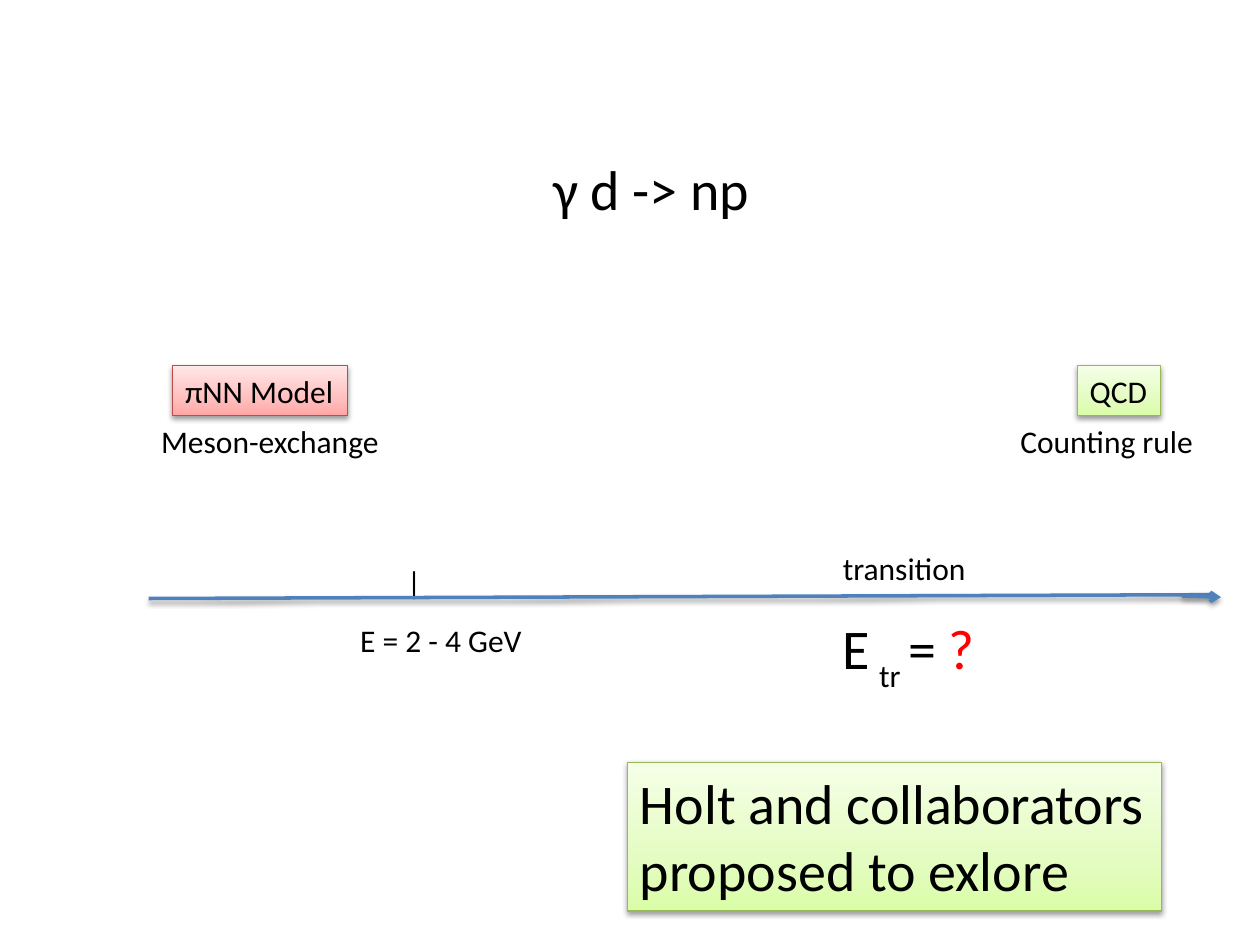
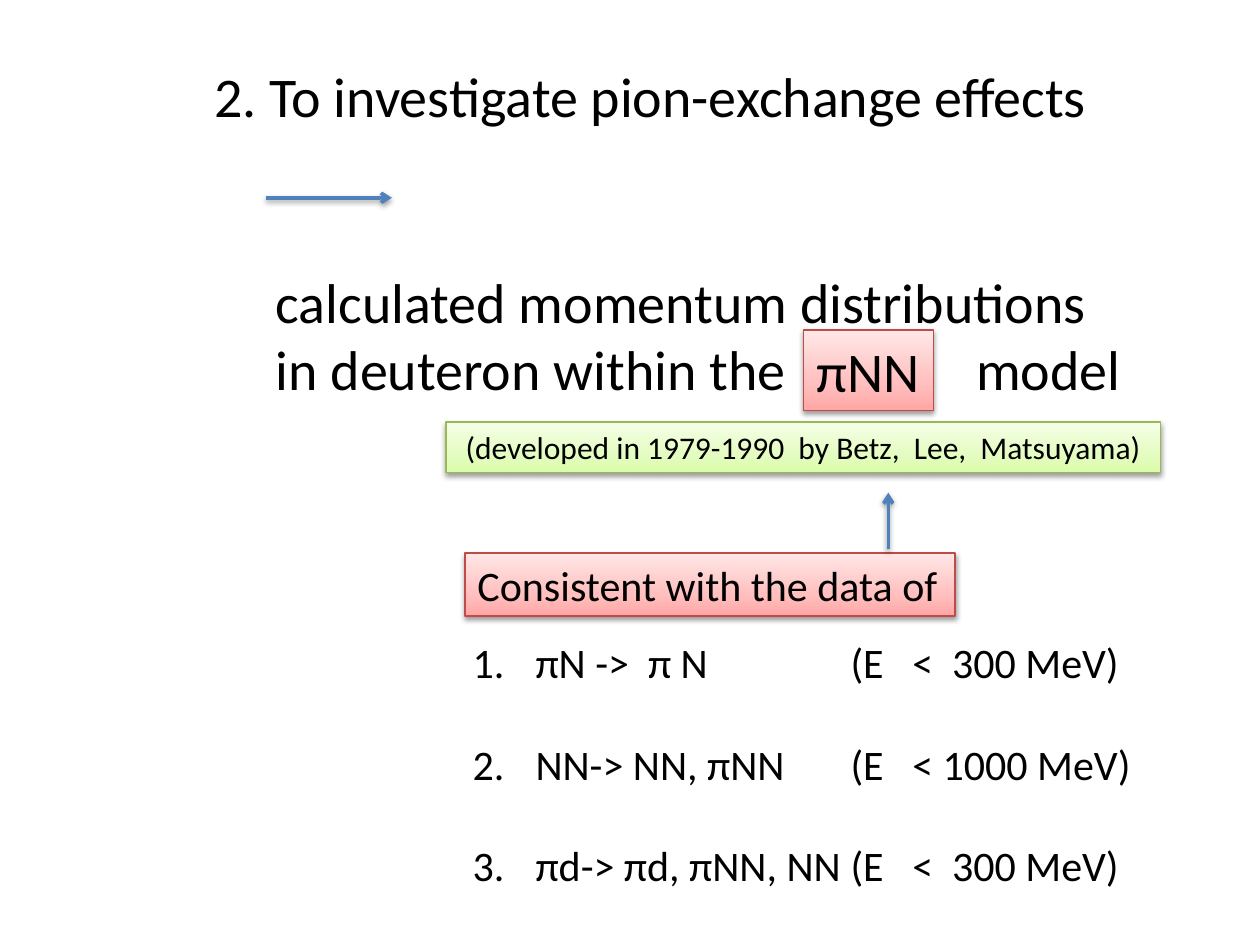
from copy import deepcopy

from lxml import etree
from pptx import Presentation
from pptx.dml.color import RGBColor
from pptx.enum.shapes import MSO_CONNECTOR, MSO_SHAPE
from pptx.enum.text import MSO_ANCHOR, MSO_AUTO_SIZE, PP_ALIGN
from pptx.oxml.ns import qn
from pptx.util import Inches, Pt

RECTANGLE = MSO_SHAPE.RECTANGLE
STRAIGHT = MSO_CONNECTOR.STRAIGHT
TOP = MSO_ANCHOR.TOP
LEFT = PP_ALIGN.LEFT
GROW = MSO_AUTO_SIZE.SHAPE_TO_FIT_TEXT
FIXED = MSO_AUTO_SIZE.NONE

THEME = {
    "font": "Calibri",
    "large": 32, "medium": 24, "small": 18,
    "text": "000000", "alert": "FF0000", "arrow": "4F81BD",
    "red": {"line": "BF4C48", "stops": ["FFA6A5", "FFC0BF", "FFE7E7"]},
    "green": {"line": "98B955", "stops": ["DAFDA7", "E4FCC2", "F5FFE7"]},
    "stop_positions": [0, 0.35, 1],
    "panel_line": 0.75, "arrow_line": 2,
}


def write(box, at, lines, size, tabs=()):
    """Place a box and fill it with left-aligned lines, with tab stops in inches."""
    for side, length in zip(("left", "top", "width", "height"), at):
        setattr(box, side, Inches(length))
    frame = box.text_frame
    frame_format = {
        "word_wrap": bool(tabs),
        "auto_size": FIXED if tabs else GROW,
        "vertical_anchor": TOP,
    }
    for name, value in frame_format.items():
        setattr(frame, name, value)
    for index, line in enumerate(lines):
        para = frame.add_paragraph() if index else frame.paragraphs[0]
        para.alignment = LEFT
        para.space_before = Pt(0)
        span = para.add_run()
        span.text = line
        span.font.name = THEME["font"]
        span.font.size = Pt(THEME[size])
        span.font.color.rgb = RGBColor.from_string(THEME["text"])
        if tabs:
            tab_list = etree.SubElement(para._p.get_or_add_pPr(), qn("a:tabLst"))
            for stop in tabs:
                etree.SubElement(tab_list, qn("a:tab"), pos=str(Inches(stop)), algn="l")


def add_shadow(item):
    effects = etree.SubElement(item._element.spPr, qn("a:effectLst"))
    shadow = etree.SubElement(effects, qn("a:outerShdw"), blurRad=str(Pt(3.1)),
                              dist=str(Pt(1.6)), dir="5400000", rotWithShape="0")
    color = etree.SubElement(shadow, qn("a:srgbClr"), val="000000")
    etree.SubElement(color, qn("a:alpha"), val="38000")


deck = Presentation()
deck.slide_width = Inches(10)
deck.slide_height = Inches(7.5)
energy_page = deck.slides.add_slide(deck.slide_layouts[5])
pion_page = deck.slides.add_slide(deck.slide_layouts[1])

# Titles
write(energy_page.shapes.title, (4.29, 1.18, 1.79, 0.64), ["γ d -> np"], "large")
write(pion_page.shapes.title, (1.6, 0.44, 7.47, 0.64),
      ["2. To investigate pion-exchange effects"], "large")

# Numbered reactions
reactions = pion_page.placeholders[1]
write(reactions, (3.65, 5, 5.56, 2.12), [
    "πN ->  π N\t(E\t<  300 MeV)",
    "NN-> NN, πNN\t(E\t< 1000 MeV)",
    "πd-> πd, πNN, NN\t(E\t<  300 MeV)",
], "medium", tabs=(3, 3.49))
for index, para in enumerate(reactions.text_frame.paragraphs):
    para.space_before = Pt(29.3 if index else 0)
    properties = para._p.get_or_add_pPr()
    properties.set("marL", str(Inches(0.5)))
    properties.set("indent", str(Inches(-0.5)))
    tab_list = properties.find(qn("a:tabLst"))
    for tag, values in (("a:buFont", {"typeface": "+mj-lt"}),
                        ("a:buAutoNum", {"type": "arabicPeriod"})):
        tab_list.addprevious(etree.Element(qn(tag), values))

# Plain labels
labels = [
    (energy_page, (1.18, 3.3, 1.95, 0.4), ["Meson-exchange"], "small", ()),
    (energy_page, (8, 3.3, 1.6, 0.4), ["Counting rule"], "small", ()),
    (energy_page, (2.76, 4.88, 1.5, 0.4), ["E = 2 - 4 GeV"], "small", ()),
    (energy_page, (6.59, 4.31, 1.21, 0.4), ["transition"], "small", ()),
    (energy_page, (3.13, 4.42, 0.32, 0.4), ["|"], "small", ()),
    (energy_page, (6.88, 5.16, 0.37, 0.4), ["tr"], "small", ()),
    (energy_page, (6.59, 4.82, 1.4, 0.64), ["E\t= "], "large", (0.52,)),
    (pion_page, (2.09, 2.07, 7.1, 1.18),
     ["calculated momentum distributions", "in deuteron within the\tmodel"],
     "large", (5.56,)),
]
for page, at, lines, size, tabs in labels:
    box = page.shapes.add_textbox(0, 0, 0, 0)
    write(box, at, lines, size, tabs)
    if lines[0].startswith("E\t"):
        question = box.text_frame.paragraphs[0].add_run()
        question.text = "?"
        question.font.name = THEME["font"]
        question.font.size = Pt(THEME[size])
        question.font.color.rgb = RGBColor.from_string(THEME["alert"])

# Shaded panels
panels = [
    (energy_page, "red", (1.37, 2.9, 1.39, 0.4), ["πNN Model"], "small"),
    (energy_page, "green", (8.55, 2.9, 0.66, 0.4), ["QCD"], "small"),
    (energy_page, "green", (4.98, 6.05, 4.24, 1.18),
     ["Holt and collaborators", "proposed to exlore"], "large"),
    (pion_page, "red", (6.38, 2.62, 1.03, 0.64), ["πNN"], "large"),
    (pion_page, "green", (3.54, 3.35, 5.67, 0.4),
     [" (developed in 1979-1990  by Betz,  Lee,  Matsuyama)"], "small"),
    (pion_page, "red", (3.69, 4.39, 3.89, 0.5), ["Consistent with the data of"], "medium"),
]
for page, tone, at, lines, size in panels:
    panel = page.shapes.add_shape(RECTANGLE, 0, 0, 0, 0)
    write(panel, at, lines, size)
    panel.fill.gradient()
    panel.fill.gradient_angle = 90
    stop_list = panel._element.spPr.find(".//" + qn("a:gsLst"))
    stop_list.insert(1, deepcopy(stop_list[0]))
    for stop, position, color in zip(panel.fill.gradient_stops,
                                     THEME["stop_positions"], THEME[tone]["stops"]):
        stop.position = position
        stop.color.rgb = RGBColor.from_string(color)
    panel.line.color.rgb = RGBColor.from_string(THEME[tone]["line"])
    panel.line.width = Pt(THEME["panel_line"])
    add_shadow(panel)

# Energy axis and arrows
arrows = [
    (energy_page, (1.18, 4.75, 9.62, 4.72), False),
    (energy_page, (9.38, 4.73, 9.69, 4.74), True),
    (pion_page, (2.11, 1.57, 3.11, 1.57), True),
    (pion_page, (7.05, 4.36, 7.05, 3.91), True),
]
for page, ends, has_head in arrows:
    arrow = page.shapes.add_connector(STRAIGHT, *(Inches(end) for end in ends))
    arrow.line.color.rgb = RGBColor.from_string(THEME["arrow"])
    arrow.line.width = Pt(THEME["arrow_line"])
    if has_head:
        outline = arrow._element.spPr.find(qn("a:ln"))
        etree.SubElement(outline, qn("a:tailEnd"), type="arrow")
    add_shadow(arrow)

deck.save("out.pptx")
